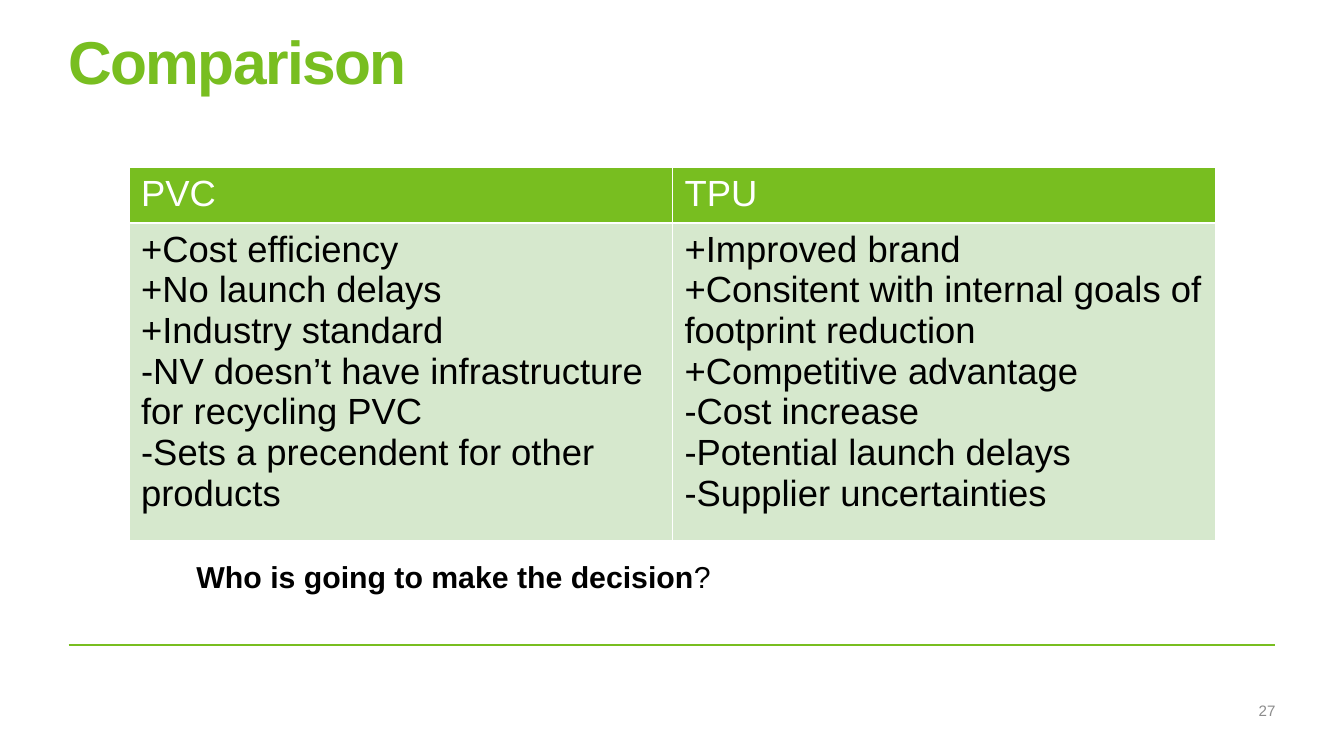
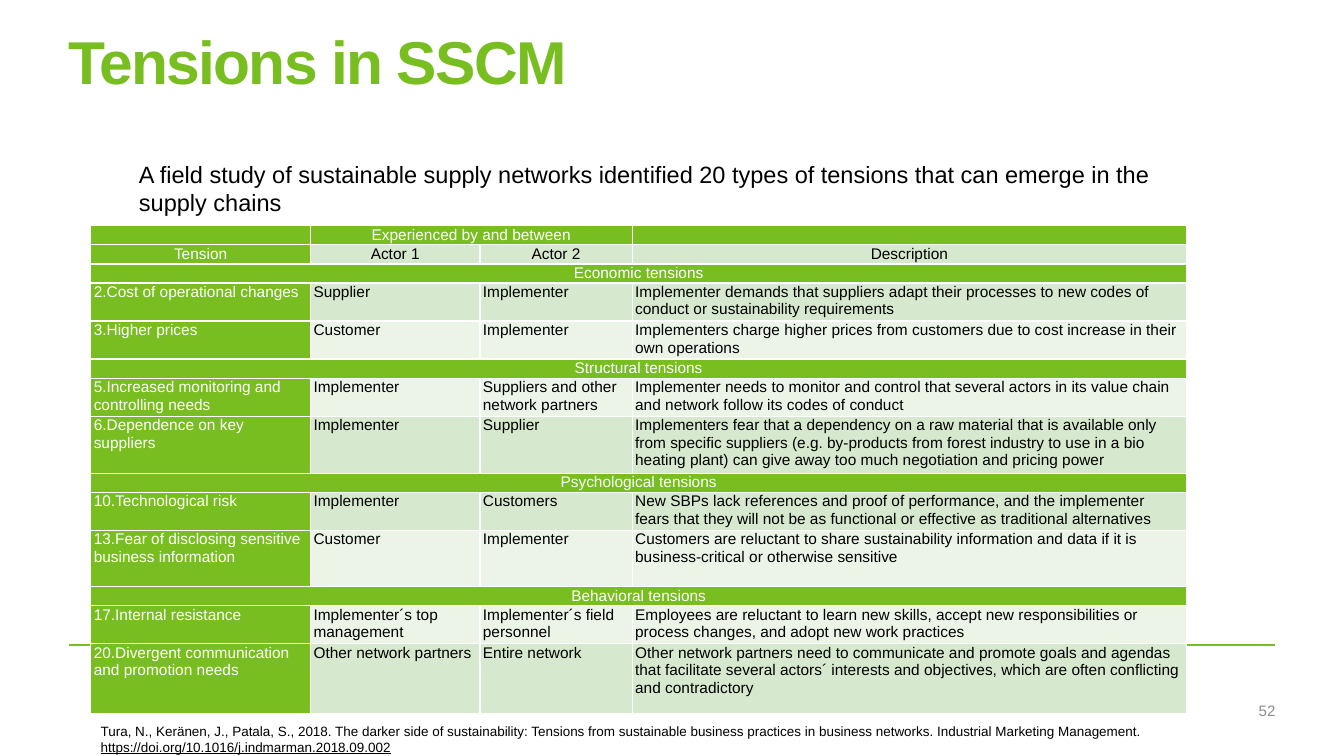
from lxml.etree import SubElement
from pptx import Presentation
from pptx.dml.color import RGBColor
from pptx.enum.shapes import MSO_CONNECTOR
from pptx.enum.text import MSO_ANCHOR, PP_ALIGN
from pptx.oxml.ns import qn
from pptx.util import Inches, Pt

GREEN = RGBColor(0x78, 0xBE, 0x20)
PALE = RGBColor(0xD6, 0xE8, 0xCD)
PALER = RGBColor(0xEC, 0xF4, 0xE8)
GRAY = RGBColor(0x8C, 0x8C, 0x8C)
BLACK = RGBColor(0, 0, 0)
WHITE = RGBColor(0xFF, 0xFF, 0xFF)

FONT = "Arial"
LEFT, RIGHT = 0.68, 12.65
CONTENT_W = RIGHT - LEFT
TEXT_INSETS = (0.1, 0.05, 0.1, 0.05)
NO_INSETS = (0, 0, 0, 0)
ROOMY = (0.12, 0.06, 0.12, 0.06)
TIGHT = (0.03, 0, 0.03, 0)

MATERIALS = [
    ("PVC", ["+Cost efficiency", "+No launch delays", "+Industry standard",
             "-NV doesn’t have infrastructure for recycling PVC",
             "-Sets a precendent for other products"]),
    ("TPU", ["+Improved brand",
             "+Consitent with internal goals of footprint reduction",
             "+Competitive advantage", "-Cost increase",
             "-Potential launch delays", "-Supplier uncertainties"]),
]
MATERIAL_ROWS = (0.55, 3.14)

GROUP_HEAD = "Experienced by and between"
COLUMN_HEADS = ("Tension", "Actor 1", "Actor 2", "Description")
TENSION_COLS = (2.18, 1.68, 1.51, 5.5)
LINE_PT = 13.4
LINE_SPACING = 1.03
TENSIONS = [
    ("Economic tensions", [
        (2, "2.Cost of operational changes", "Supplier", "Implementer",
         "Implementer demands that suppliers adapt their processes to new "
         "codes of conduct or sustainability requirements"),
        (2, "3.Higher prices", "Customer", "Implementer",
         "Implementers charge higher prices from customers due to cost "
         "increase in their own operations"),
    ]),
    ("Structural tensions", [
        (2, "5.Increased monitoring and controlling needs", "Implementer",
         "Suppliers and other network partners",
         "Implementer needs to monitor and control that several actors in "
         "its value chain and network follow its codes of conduct"),
        (3, "6.Dependence on key suppliers", "Implementer", "Supplier",
         "Implementers fear that a dependency on a raw material that is "
         "available only from specific suppliers (e.g. by-products from "
         "forest industry to use in a bio heating plant) can give away too "
         "much negotiation and pricing power"),
    ]),
    ("Psychological tensions", [
        (2, "10.Technological risk", "Implementer", "Customers",
         "New SBPs lack references and proof of performance, and the "
         "implementer fears that they will not be as functional or effective "
         "as traditional alternatives"),
        (3, "13.Fear of disclosing sensitive business information",
         "Customer", "Implementer",
         "Customers are reluctant to share sustainability information and "
         "data if it is business-critical or otherwise sensitive"),
    ]),
    ("Behavioral tensions", [
        (2, "17.Internal resistance", "Implementer´s top management",
         "Implementer´s field personnel",
         "Employees are reluctant to learn new skills, accept new "
         "responsibilities or process changes, and adopt new work practices"),
        (3.75, "20.Divergent communication and promotion needs",
         "Other network partners", "Entire network",
         "Other network partners need to communicate and promote goals and "
         "agendas that facilitate several actors´ interests and objectives, "
         "which are often conflicting and contradictory"),
    ]),
]
INTRO = ("A field study of sustainable supply networks identified 20 types of "
         "tensions that can emerge in the supply chains")
CITATION = ("Tura, N., Keränen, J., Patala, S., 2018. The darker side of "
            "sustainability: Tensions from sustainable business practices in "
            "business networks. Industrial Marketing Management. ")
DOI = "https://doi.org/10.1016/j.indmarman.2018.09.002"


def style(r, size, color):
    f = r.font
    f.name, f.size = FONT, Pt(size)
    f.color.rgb = color


def set_insets(target, insets):
    (target.margin_left, target.margin_top,
     target.margin_right, target.margin_bottom) = map(Inches, insets)


def add_text(slide, box, runs, size, color=BLACK, insets=TEXT_INSETS):
    sp = slide.shapes.add_textbox(*map(Inches, box))
    tf = sp.text_frame
    tf.word_wrap = True
    set_insets(tf, insets)
    p = tf.paragraphs[0]
    for text in runs:
        r = p.add_run()
        r.text = text
        style(r, size, color)
    return tf


def add_base(prs, title, number):
    slide = prs.slides.add_slide(prs.slide_layouts[6])
    rule = slide.shapes.add_connector(
        MSO_CONNECTOR.STRAIGHT, Inches(LEFT), Inches(6.4), Inches(RIGHT), Inches(6.4))
    rule.line.color.rgb = GREEN
    rule.line.width = Pt(1)
    SubElement(rule._element.spPr, qn("a:effectLst"))
    tf = add_text(slide, (LEFT, 0.35, CONTENT_W, 1.31), [title], 43.2, GREEN, NO_INSETS)
    p = tf.paragraphs[0]
    p.line_spacing = 0.85
    p.runs[0].font.bold = True
    p.runs[0].font._element.set("spc", "-120")
    tf = add_text(slide, (7.37, 6.96, RIGHT - 7.37, 0.18), [str(number)], 10.8, GRAY,
                  (0.1, 0.05, 0, 0.05))
    tf.vertical_anchor = MSO_ANCHOR.MIDDLE
    tf.paragraphs[0].alignment = PP_ALIGN.RIGHT
    return slide


def add_grid(slide, left, top, cols, rows):
    frame = slide.shapes.add_table(len(rows), len(cols), Inches(left), Inches(top),
                                   Inches(sum(cols)), sum(rows))
    table = frame.table
    table.first_row = table.horz_banding = False
    for column, width in zip(table.columns, cols):
        column.width = Inches(width)
    for row, height in zip(table.rows, rows):
        row.height = height
    return table


def fill_cell(cell, lines, size, fill, color, insets, align=PP_ALIGN.LEFT, spacing=None):
    set_insets(cell, insets)
    cell.fill.solid()
    cell.fill.fore_color.rgb = fill
    cell.text_frame.text = "\n".join(lines)
    for p in cell.text_frame.paragraphs:
        p.alignment = align
        p.line_spacing = spacing
        p._p.get_or_add_endParaRPr().set("sz", str(size * 100))
        for r in p.runs:
            style(r, size, color)


def build_comparison(prs):
    slide = add_base(prs, "Comparison", 27)
    table = add_grid(slide, 1.28, 1.66, (5.39, 5.39), [Inches(h) for h in MATERIAL_ROWS])
    for c, (name, points) in enumerate(MATERIALS):
        fill_cell(table.cell(0, c), [name], 26, GREEN, WHITE, ROOMY)
        fill_cell(table.cell(1, c), points, 26, PALE, BLACK, ROOMY)
    tf = add_text(slide, (1.25, 5.49, 7.42, 0.46),
                  ["Who is going to make the decision", "?"], 21.6)
    p = tf.paragraphs[0]
    p.runs[0].font.bold = True
    p._p.get_or_add_pPr().set("marL", str(Inches(0.6)))


def build_tensions(prs):
    slide = add_base(prs, "Tensions in SSCM", 52)
    rows = [(1, "", GROUP_HEAD, "", ""), (1, *COLUMN_HEADS)]
    sections = set()
    for section, entries in TENSIONS:
        sections.add(len(rows))
        rows += [(1, section, "", "", ""), *entries]
    table = add_grid(slide, 0.9, 2.24, TENSION_COLS, [Pt(LINE_PT * row[0]) for row in rows])
    for i, (_, *texts) in enumerate(rows):
        for c, text in enumerate(texts):
            green = c == 0 or i == 0 or i in sections
            fill = GREEN if green else PALE if i % 2 else PALER
            centred = i < 2 or i in sections
            fill_cell(table.cell(i, c), [text], 11, fill, WHITE if green else BLACK, TIGHT,
                      PP_ALIGN.CENTER if centred else PP_ALIGN.LEFT, LINE_SPACING)
    table.cell(0, 1).merge(table.cell(0, 2))
    for i in sections:
        table.cell(i, 0).merge(table.cell(i, len(TENSION_COLS) - 1))
    add_text(slide, (1.28, 1.54, 10.68, 0.67), [INTRO], 16.8)
    tf = add_text(slide, (0.9, 7.12, 10.67, 0.42), [CITATION, DOI], 9.6)
    tf.paragraphs[0].runs[1].font.underline = True


def main():
    prs = Presentation()
    prs.slide_width, prs.slide_height = Inches(13.33), Inches(7.5)
    build_comparison(prs)
    build_tensions(prs)
    prs.save("out.pptx")


if __name__ == "__main__":
    main()
